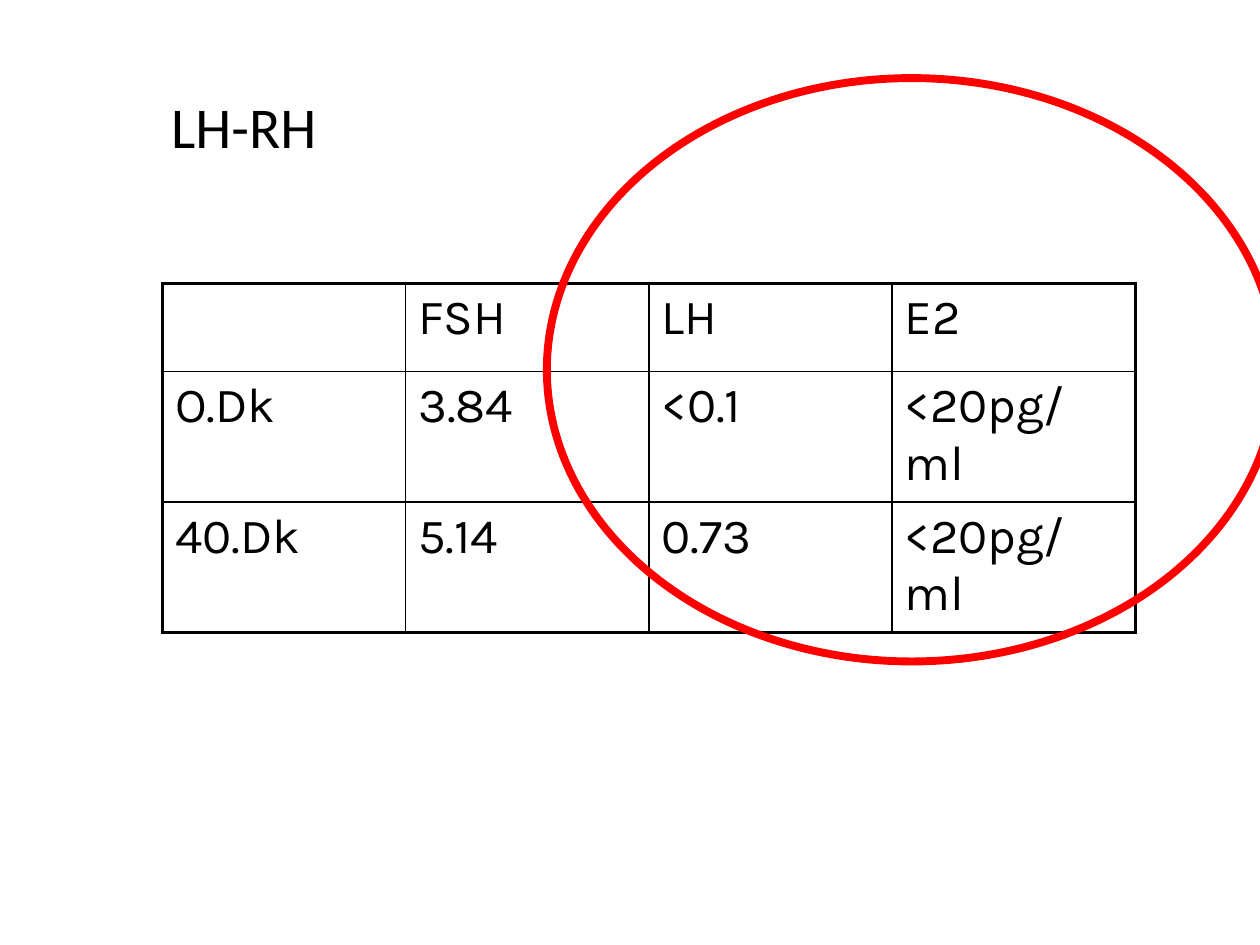
from lxml import etree
from pptx import Presentation
from pptx.dml.color import RGBColor
from pptx.enum.shapes import MSO_SHAPE
from pptx.enum.text import MSO_ANCHOR
from pptx.oxml.ns import qn
from pptx.util import Inches, Pt

MIDDLE, TOP = MSO_ANCHOR.MIDDLE, MSO_ANCHOR.TOP
OVAL = MSO_SHAPE.OVAL

# Content
TITLE = "LH-RH"
HORMONE_ROWS = [
    ["", "FSH", "LH", "E2"],
    ["O.Dk", "3.84", "<0.1", "<20pg/ml"],
    ["40.Dk", "5.14", "0.73", "<20pg/ml"],
]

# Layout in inches, line widths in points
SLIDE_W, SLIDE_H = 10, 7.5
TITLE_BOX = (1.26, 0.23, 8.52, 1.6)
TABLE_LEFT, TABLE_TOP, COLUMN_W = 1.29, 2.25, 1.93
ROW_HEIGHTS = [0.7, 0.75, 0.75]
HIGHLIGHT_BOX = (4.34, 0.62, 5.79, 4.63)
OUTER_LINE, INNER_LINE, HIGHLIGHT_LINE = 2.25, 1, 4.5
COLORS = {"ink": "000000", "highlight": "FF0000"}


def write(frame, text, *, font, size, anchor=TOP, spacing=1.0):
    frame.word_wrap = True
    frame.vertical_anchor = anchor
    paragraph = frame.paragraphs[0]
    paragraph.line_spacing = spacing
    run = paragraph.add_run()
    run.text = text
    run.font.name = font
    run.font.size = Pt(size)
    run.font.color.rgb = RGBColor.from_string(COLORS["ink"])


def set_borders(cell, widths):
    properties = cell._tc.get_or_add_tcPr()
    for position, (side, width) in enumerate(widths.items()):
        line = etree.Element(qn(f"a:{side}"), w=str(Pt(width)))
        fill = etree.SubElement(line, qn("a:solidFill"))
        etree.SubElement(fill, qn("a:srgbClr"), val=COLORS["ink"])
        properties.insert(position, line)


def add_hormone_table(slide):
    row_count, column_count = len(HORMONE_ROWS), len(HORMONE_ROWS[0])
    table = slide.shapes.add_table(
        row_count, column_count, Inches(TABLE_LEFT), Inches(TABLE_TOP),
        Inches(COLUMN_W * column_count), Inches(sum(ROW_HEIGHTS))).table
    table.first_row = table.horz_banding = False
    for column in table.columns:
        column.width = Inches(COLUMN_W)
    for r, values in enumerate(HORMONE_ROWS):
        table.rows[r].height = Inches(ROW_HEIGHTS[r])
        for c, value in enumerate(values):
            cell = table.cell(r, c)
            cell.fill.background()
            if value:
                write(cell.text_frame, value, font="Karla", size=28)
            on_edge = {"lnL": c == 0, "lnR": c == column_count - 1,
                       "lnT": r == 0, "lnB": r == row_count - 1}
            set_borders(cell, {side: OUTER_LINE if edge else INNER_LINE
                               for side, edge in on_edge.items()})


def main():
    deck = Presentation()
    deck.slide_width, deck.slide_height = Inches(SLIDE_W), Inches(SLIDE_H)
    slide = deck.slides.add_slide(deck.slide_layouts[6])

    # Title
    title = slide.shapes.add_textbox(*map(Inches, TITLE_BOX))
    write(title.text_frame, TITLE, font="Calibri", size=33,
          anchor=MIDDLE, spacing=0.9)

    # Hormone values
    add_hormone_table(slide)

    # Ring around the LH and E2 columns
    ring = slide.shapes.add_shape(OVAL, *map(Inches, HIGHLIGHT_BOX))
    ring.shadow.inherit = False
    ring.fill.background()
    ring.line.color.rgb = RGBColor.from_string(COLORS["highlight"])
    ring.line.width = Pt(HIGHLIGHT_LINE)

    deck.save("out.pptx")


if __name__ == "__main__":
    main()
